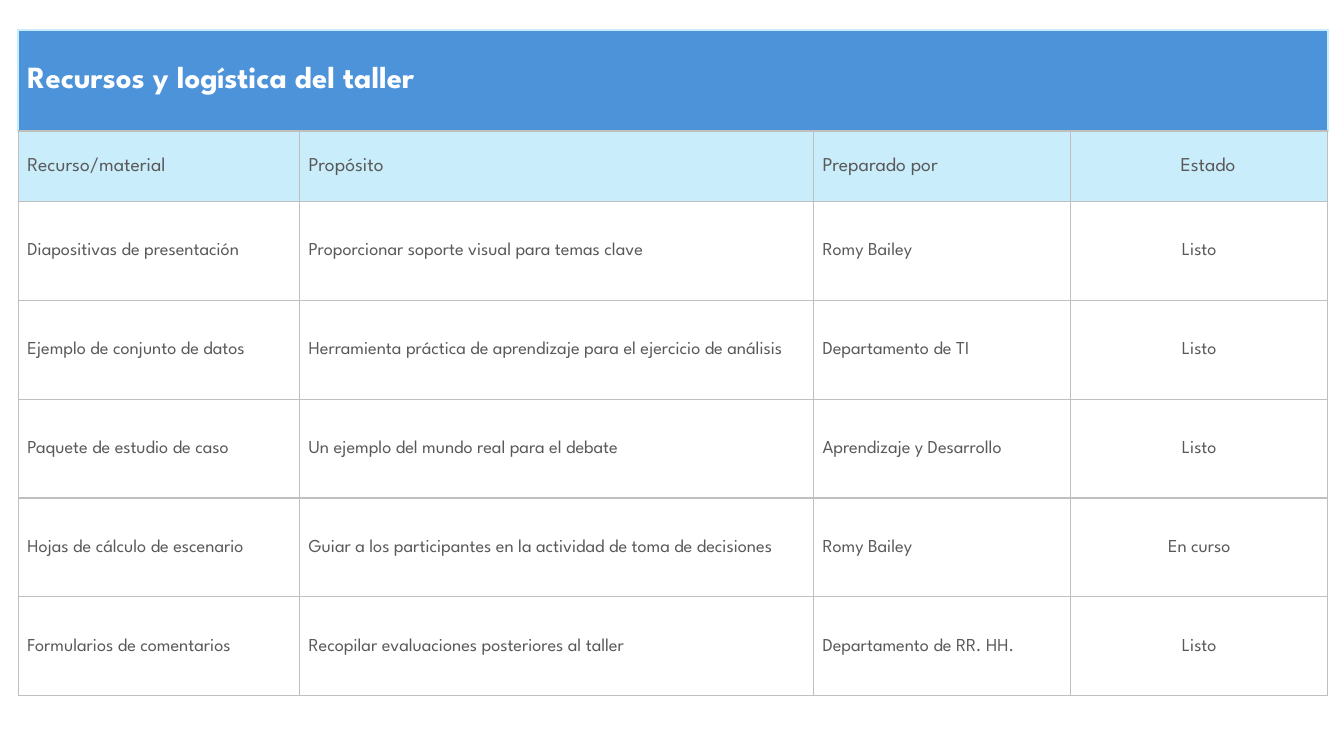
from lxml.etree import SubElement as Sub
from pptx import Presentation
from pptx.dml.color import RGBColor as Rgb
from pptx.enum.text import MSO_ANCHOR as Anchor, PP_ALIGN as Align
from pptx.oxml.ns import qn
from pptx.util import Cm, Pt

HUES = {"title": "4D93D9", "head": "CAEDFB", "rule": "BFBFBF",
        "text": "595959", "white": "FFFFFF"}
WIDTHS = [7.09, 12.95, 6.48, 6.48]
HEIGHTS = [2.54, 1.78] + [2.49] * 5
TITLE = "Recursos y logística del taller"
ROWS = [
    ["Recurso/material", "Propósito", "Preparado por", "Estado"],
    ["Diapositivas de presentación",
     "Proporcionar soporte visual para temas clave", "Romy Bailey", "Listo"],
    ["Ejemplo de conjunto de datos",
     "Herramienta práctica de aprendizaje para el ejercicio de análisis",
     "Departamento de TI", "Listo"],
    ["Paquete de estudio de caso",
     "Un ejemplo del mundo real para el debate",
     "Aprendizaje y Desarrollo", "Listo"],
    ["Hojas de cálculo de escenario",
     "Guiar a los participantes en la actividad de toma de decisiones",
     "Romy Bailey", "En curso"],
    ["Formularios de comentarios",
     "Recopilar evaluaciones posteriores al taller",
     "Departamento de RR. HH.", "Listo"],
]
LOOKS = {
    "title": {"size": Pt(22), "bold": True},
    "head": {"size": Pt(14), "bold": False},
    "body": {"size": Pt(13), "bold": False},
}


def assign(item, values):
    """Set each attribute of item from a dict."""
    for name, value in values.items():
        setattr(item, name, value)


def edge(cell, kind):
    """Draw the four borders of a cell."""
    props = cell._tc.get_or_add_tcPr()
    for side in "LRTB":
        bright = kind == "title" and side != "B"
        width = Pt(1.5 if bright else 1)
        line = Sub(props, qn(f"a:ln{side}"), w=str(width))
        fill = Sub(line, qn("a:solidFill"))
        Sub(fill, qn("a:srgbClr"), val=HUES["head" if bright else "rule"])


def paint(cell, kind):
    """Fill a cell by its kind, or leave it clear."""
    if kind in HUES:
        cell.fill.solid()
        cell.fill.fore_color.rgb = Rgb.from_string(HUES[kind])
    else:
        cell.fill.background()


def write(cell, text, kind, status=False):
    """Put styled text into a cell."""
    left = {"head": 0.48, "body": 0.03}[kind] if status else 0.23
    assign(cell, {"margin_left": Cm(left), "margin_right": Cm(0.03),
                  "margin_top": Cm(0.03), "margin_bottom": Cm(0),
                  "vertical_anchor": Anchor.MIDDLE})
    para = cell.text_frame.paragraphs[0]
    para.alignment = Align.CENTER if status else Align.LEFT
    run = para.add_run()
    run.text = text
    assign(run.font, {"name": "League Spartan", **LOOKS[kind]})
    hue = HUES["white" if kind == "title" else "text"]
    run.font.color.rgb = Rgb.from_string(hue)


def add_grid(slide):
    """Add the empty table with its column and row sizes."""
    frame = slide.shapes.add_table(
        len(HEIGHTS), len(WIDTHS), Cm(0.46), Cm(0.76),
        Cm(sum(WIDTHS)), Cm(sum(HEIGHTS)))
    grid = frame.table
    assign(grid, {"first_row": False, "horz_banding": False})
    for col, width in zip(grid.columns, WIDTHS):
        col.width = Cm(width)
    for row, height in zip(grid.rows, HEIGHTS):
        row.height = Cm(height)
    return grid


def main():
    """Build the slide and save it."""
    deck = Presentation()
    assign(deck, {"slide_width": Cm(33.87), "slide_height": Cm(19.05)})
    slide = deck.slides.add_slide(deck.slide_layouts[6])
    grid = add_grid(slide)
    kinds = ["title", "head"] + ["body"] * (len(ROWS) - 1)
    for row, kind in zip(grid.rows, kinds):
        for cell in row.cells:
            edge(cell, kind)
            paint(cell, kind)
    last = len(WIDTHS) - 1
    grid.cell(0, 0).merge(grid.cell(0, last))
    write(grid.cell(0, 0), TITLE, "title")
    for r, texts in enumerate(ROWS, 1):
        for c, text in enumerate(texts):
            write(grid.cell(r, c), text, kinds[r], c == last)
    deck.save("out.pptx")


if __name__ == "__main__":
    main()
